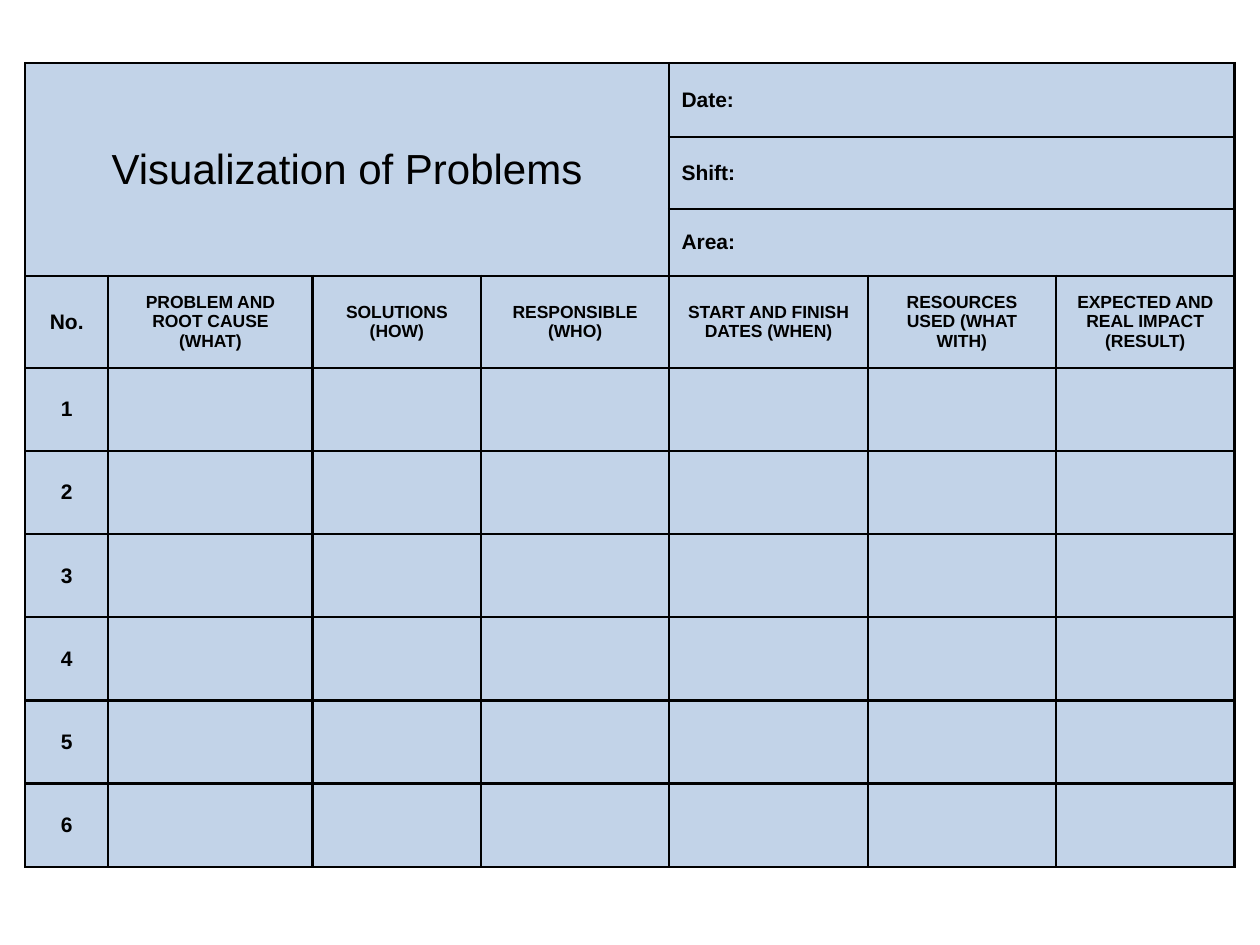
from dataclasses import dataclass

from lxml.etree import SubElement as Sub
from pptx import Presentation
from pptx.dml.color import RGBColor as RGB
from pptx.enum.text import MSO_ANCHOR as Anchor, PP_ALIGN as Align
from pptx.oxml.ns import qn
from pptx.util import Emu, Pt

PX = 9144  # EMU per px, 100 px to the inch


@dataclass
class Theme:
    fill: RGB = RGB(0xC2, 0xD3, 0xE8)
    ink: RGB = RGB(0, 0, 0)
    font: str = "Arial"
    title: int = 24
    label: int = 12
    head: int = 10
    line: float = 1.5


def px(num):
    return Emu(num * PX)


def write(cell, text, theme, size, bold=True, align=Align.CENTER):
    para = cell.text_frame.paragraphs[0]
    para.alignment = align
    gap = Sub(para._p.get_or_add_pPr(), qn("a:spcBef"))
    Sub(gap, qn("a:spcPct"), val="20000")
    run = para.add_run()
    run.text = text
    font = run.font
    font.name, font.size, font.bold = theme.font, Pt(size), bold
    font.color.rgb = theme.ink


class Page:
    def __init__(self, slide, theme):
        self.slide = slide
        self.theme = theme

    def edge(self, cell):
        props = cell._tc.get_or_add_tcPr()
        for side in ("lnL", "lnR", "lnT", "lnB"):
            line = Sub(props, qn("a:" + side), w=str(Pt(self.theme.line)))
            fill = Sub(line, qn("a:solidFill"))
            Sub(fill, qn("a:srgbClr"), val=str(self.theme.ink))

    def table(self, left, top, cols, rows):
        frame = self.slide.shapes.add_table(
            len(rows), len(cols), px(left), px(top), px(sum(cols)), px(sum(rows)))
        grid = frame.table
        grid.first_row = grid.horz_banding = False
        for col, wide in zip(grid.columns, cols):
            col.width = px(wide)
        for row, high in zip(grid.rows, rows):
            row.height = px(high)
        for cell in grid.iter_cells():
            self.edge(cell)
            cell.fill.solid()
            cell.fill.fore_color.rgb = self.theme.fill
            cell.vertical_anchor = Anchor.MIDDLE
        return grid


def main():
    deck = Presentation()
    deck.slide_width, deck.slide_height = px(1000), px(750)
    theme = Theme()
    page = Page(deck.slides.add_slide(deck.slide_layouts[6]), theme)

    labels = ["Date:", "Shift:", "Area:"]
    heads = ["PROBLEM AND ROOT CAUSE (WHAT)", "SOLUTIONS (HOW)",
             "RESPONSIBLE (WHO)", "START AND FINISH DATES (WHEN)",
             "RESOURCES USED (WHAT WITH)", "EXPECTED AND REAL IMPACT (RESULT)"]
    count = 6
    grid = page.table(20, 50, [66, 162, 134, 149, 158, 149, 142],
                      [59, 57, 53, 73] + [66] * count)

    # Title block
    grid.cell(0, 0).merge(grid.cell(2, 3))
    write(grid.cell(0, 0), "Visualization of Problems", theme, theme.title, bold=False)

    # Form fields
    for row, text in enumerate(labels):
        grid.cell(row, 4).merge(grid.cell(row, 6))
        write(grid.cell(row, 4), text, theme, theme.label, align=Align.LEFT)

    # Column heads
    for col, text in enumerate(heads, 1):
        write(grid.cell(3, col), text, theme, theme.head)

    # Number column
    for row, text in enumerate(["No.", *range(1, count + 1)], 3):
        write(grid.cell(row, 0), str(text), theme, theme.label)

    deck.save("out.pptx")


if __name__ == "__main__":
    main()
